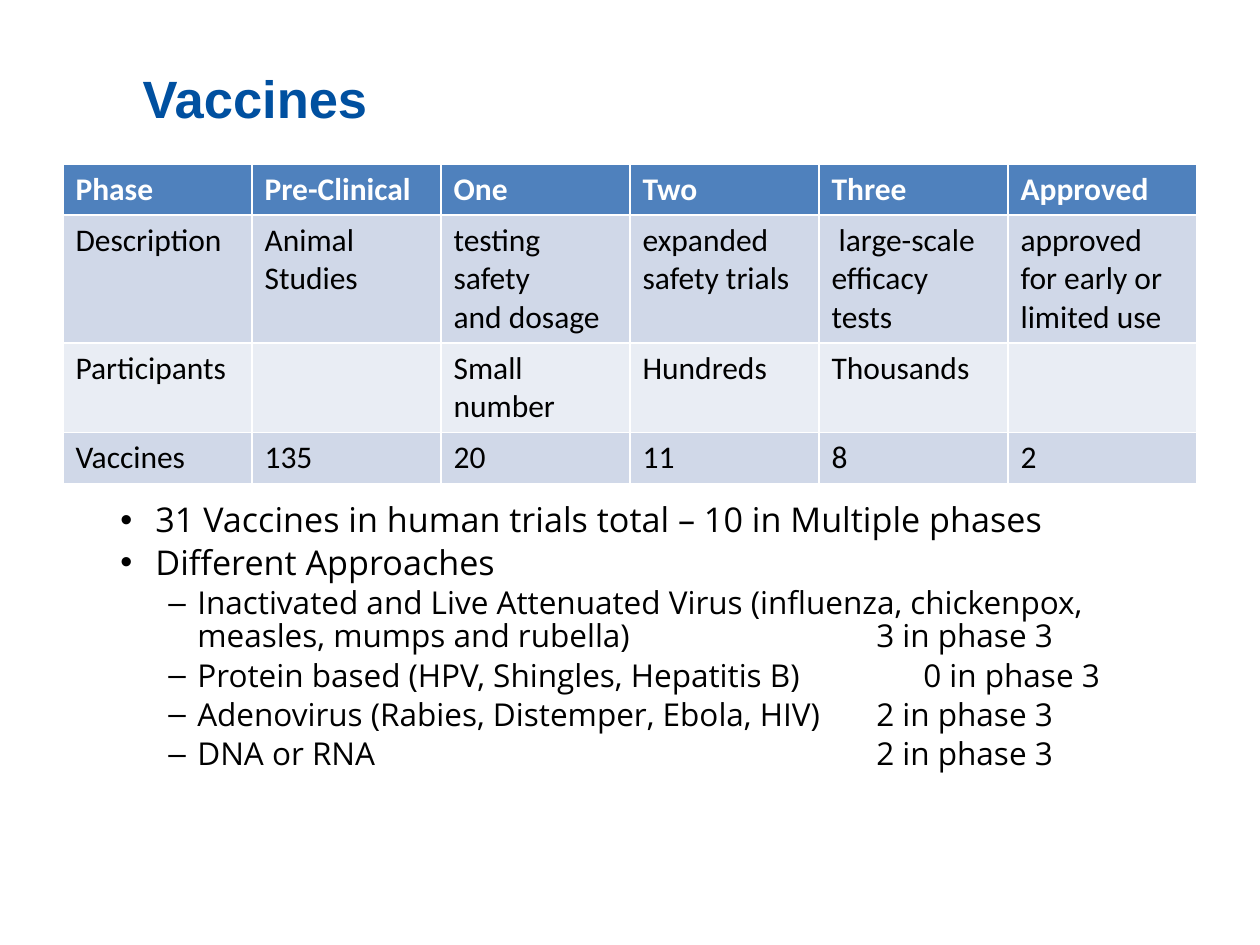
from lxml import etree
from pptx import Presentation
from pptx.dml.color import RGBColor
from pptx.enum.text import MSO_ANCHOR, PP_ALIGN
from pptx.oxml.ns import qn
from pptx.util import Emu, Pt

EMU_PER_PX = 914400 / 126


def px(n):
    return Emu(round(n * EMU_PER_PX))


def style(p, font, size, color, bold=False):
    """Format every run of a paragraph."""
    for r in p.runs:
        r.font.name = font
        r.font.size = Pt(size)
        r.font.bold = bold
        r.font.color.rgb = RGBColor.from_string(color)


prs = Presentation()
prs.slide_width, prs.slide_height = px(1260), px(945)
s = prs.slides.add_slide(prs.slide_layouts[5])

# Title
title = s.shapes.title
title.left, title.top, title.width, title.height = px(63), px(50), px(1134), px(96)
tf = title.text_frame
tf.text = "Vaccines"
tf.vertical_anchor = MSO_ANCHOR.MIDDLE
p = tf.paragraphs[0]
p.alignment = PP_ALIGN.LEFT
p._p.get_or_add_pPr().set("marL", str(px(67)))
style(p, "Arial", 30, "0050A0", bold=True)

# Trial phases
rows = [
    ["Phase", "Pre-Clinical", "One", "Two", "Three", "Approved"],
    ["Description", "Animal Studies", "testing safety\nand dosage",
     "expanded\nsafety trials", " large-scale\nefficacy tests",
     "approved for early or limited use"],
    ["Participants", "", "Small number", "Hundreds", "Thousands", ""],
    ["Vaccines", "135", "20", "11", "8", "2"],
]
row_heights = [51, 127, 89, 51]
row_fills = ["4F81BD", "D0D8E8", "E9EDF4", "D0D8E8"]
table = s.shapes.add_table(len(rows), len(rows[0]), px(63), px(164),
                           px(1134), px(sum(row_heights))).table
for i, texts in enumerate(rows):
    table.rows[i].height = px(row_heights[i])
    for j, text in enumerate(texts):
        cell = table.cell(i, j)
        cell.fill.solid()
        cell.fill.fore_color.rgb = RGBColor.from_string(row_fills[i])
        cell.text_frame.text = text
        for p in cell.text_frame.paragraphs:
            style(p, "Calibri", 18, "FFFFFF" if i == 0 else "000000", bold=i == 0)

# Approaches
points = [
    (0, "31 Vaccines in human trials total – 10 in Multiple phases"),
    (0, "Different Approaches"),
    (1, "Inactivated and Live Attenuated Virus (influenza, chickenpox, "
        "measles, mumps and rubella)\t3 in phase 3"),
    (1, "Protein based (HPV, Shingles, Hepatitis B)\t0 in phase 3"),
    (1, "Adenovirus (Rabies, Distemper, Ebola, HIV)\t2 in phase 3"),
    (1, "DNA or RNA\t2 in phase 3"),
]
levels = [  # bullet, left margin, hanging indent, text size
    ("•", 35, 35, 19.5),
    ("–", 77, 29, 18),
]
tf = s.shapes.add_textbox(px(108), px(498), px(1043), px(374)).text_frame
tf.word_wrap = True
for i, (level, text) in enumerate(points):
    bullet, margin, hanging, size = levels[level]
    p = tf.paragraphs[0] if i == 0 else tf.add_paragraph()
    p.text = text
    p.level = level
    p.line_spacing = 0.87
    if i > 0:
        p.space_before = Pt(size * 0.2)
    pPr = p._p.get_or_add_pPr()
    pPr.set("marL", str(px(margin)))
    pPr.set("indent", str(-px(hanging)))
    etree.SubElement(pPr, qn("a:buFont"), typeface="Arial")
    etree.SubElement(pPr, qn("a:buChar"), char=bullet)
    if "\t" in text:
        stop = 803 if text.startswith("Protein") else 756
        tabs = etree.SubElement(pPr, qn("a:tabLst"))
        etree.SubElement(tabs, qn("a:tab"), pos=str(px(stop)), algn="l")
    style(p, "Open Sans", size, "000000")

prs.save("out.pptx")
